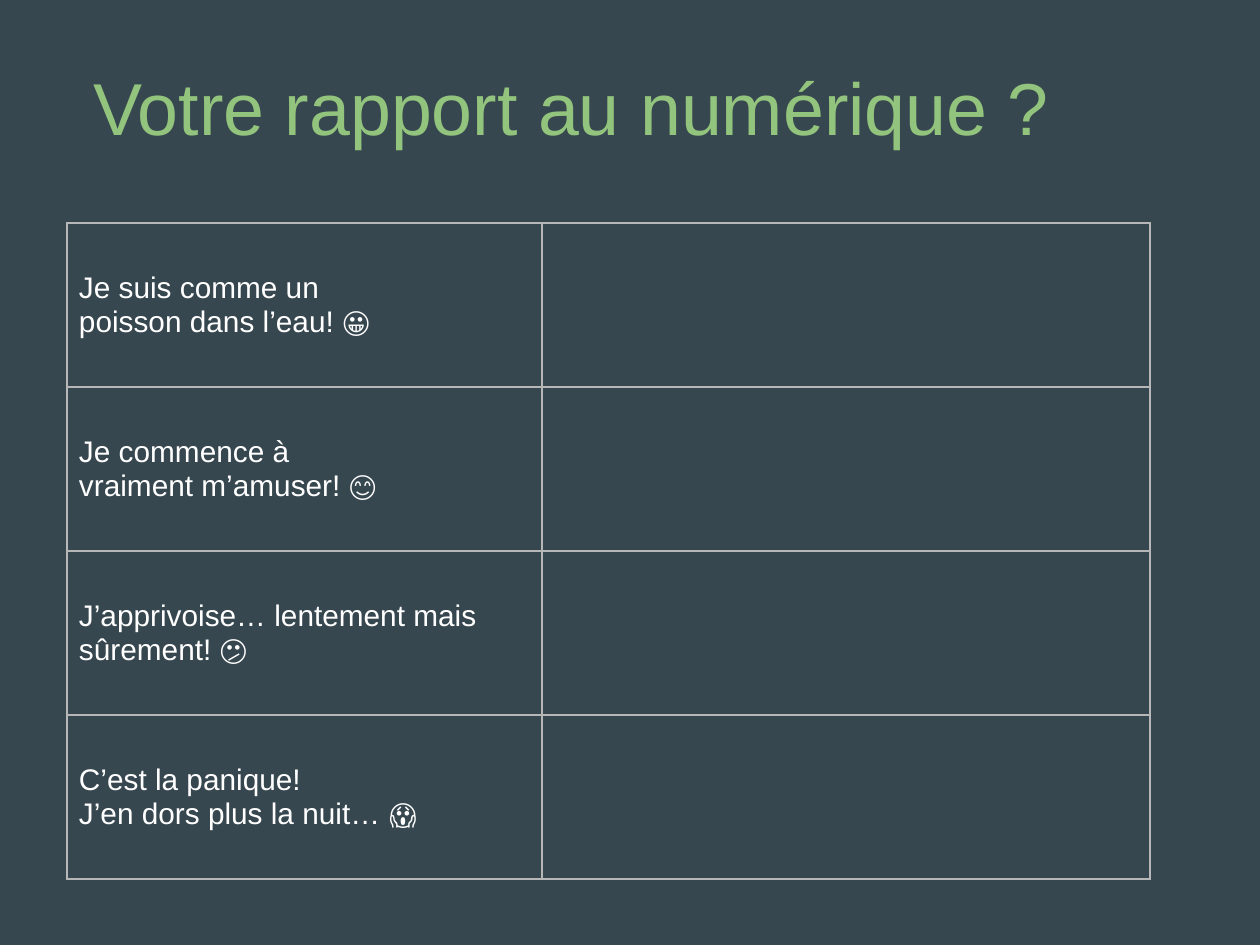
from lxml.etree import SubElement
from pptx import Presentation
from pptx.dml.color import RGBColor
from pptx.enum.text import MSO_ANCHOR
from pptx.oxml.ns import qn
from pptx.util import Emu, Pt

BACKGROUND = RGBColor(0x37, 0x47, 0x4F)
GREEN = RGBColor(0x93, 0xC4, 0x7D)
WHITE = RGBColor(0xFF, 0xFF, 0xFF)
BORDER = RGBColor(0xB7, 0xB7, 0xB7)


def px(length):
    return Emu(round(length * 914400 / 126))


def write(frame, text, size, color, font="Arial"):
    """Write each line of text as its own paragraph."""
    for index, line in enumerate(text.split("\n")):
        para = frame.add_paragraph() if index else frame.paragraphs[0]
        span = para.add_run()
        span.text = line
        span.font.name = font
        span.font.size = Pt(size)
        span.font.color.rgb = color


deck = Presentation()
deck.slide_width, deck.slide_height = px(1260), px(945)
page = deck.slides.add_slide(deck.slide_layouts[6])
page.background.fill.solid()
page.background.fill.fore_color.rgb = BACKGROUND

# Title
box = page.shapes.add_textbox(px(81), px(42), px(1201), px(158))
frame = box.text_frame
frame.word_wrap = True
frame.margin_left = frame.margin_right = frame.margin_bottom = px(12)
frame.margin_top = px(20)
write(frame, "Votre rapport au numérique ?", size=42, color=GREEN)

# Table: one statement per row, with an empty answer cell
statements = [
    "Je suis comme un\npoisson dans l’eau! 😀",
    "Je commence à\nvraiment m’amuser! 😊",
    "J’apprivoise… lentement mais sûrement! 😕",
    "C’est la panique!\nJ’en dors plus la nuit… 😱",
]
column_widths = [475, 608]
row_height = 164
table = page.shapes.add_table(
    len(statements), len(column_widths), px(67), px(223),
    px(sum(column_widths)), px(row_height * len(statements))).table
table.first_row = table.horz_banding = False
for column, width in zip(table.columns, column_widths):
    column.width = px(width)
for row, statement in zip(table.rows, statements):
    row.height = px(row_height)
    write(row.cells[0].text_frame, statement, size=17, color=WHITE)

# Cell format and borders
for cell in table.iter_cells():
    cell.vertical_anchor = MSO_ANCHOR.MIDDLE
    cell.margin_left = cell.margin_right = px(12)
    cell.margin_top = cell.margin_bottom = px(16)
    properties = cell._tc.get_or_add_tcPr()
    for side in ("a:lnL", "a:lnR", "a:lnT", "a:lnB"):
        line = SubElement(properties, qn(side), w=str(Pt(0.75)))
        fill = SubElement(line, qn("a:solidFill"))
        SubElement(fill, qn("a:srgbClr"), val=str(BORDER))
    cell.fill.background()

deck.save("out.pptx")
